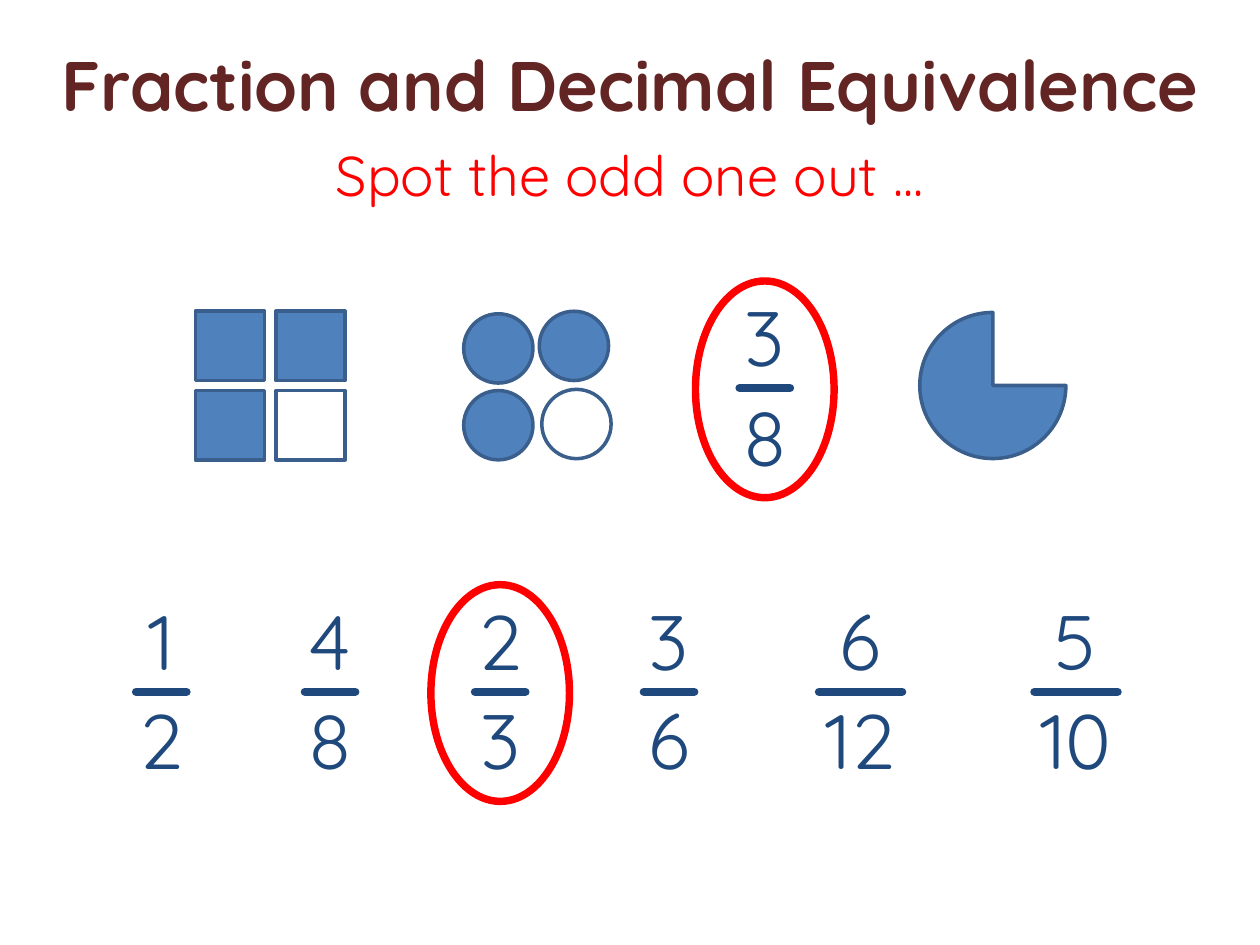
"""Build a slide on spotting the odd one out among equivalent fractions."""
from dataclasses import dataclass

from lxml.etree import SubElement
from pptx import Presentation
from pptx.dml.color import RGBColor
from pptx.enum.shapes import MSO_CONNECTOR as Connector, MSO_SHAPE as Shape
from pptx.enum.text import MSO_ANCHOR as Anchor, MSO_AUTO_SIZE as AutoSize, PP_ALIGN as Align
from pptx.oxml.ns import qn
from pptx.util import Inches, Pt

COLORS = {
    "title": "632523",
    "accent": "FF0000",
    "digit": "1F497D",
    "shaded": "4F81BD",
    "unshaded": "FFFFFF",
    "outline": "3A5F8C",
}
FONT = "Quicksand"
CELL = 0.55
FRAME_FORMAT = {
    "word_wrap": False,
    "auto_size": AutoSize.SHAPE_TO_FIT_TEXT,
    "vertical_anchor": Anchor.TOP,
    "margin_left": Inches(0.1),
    "margin_right": Inches(0.1),
    "margin_top": Inches(0.05),
    "margin_bottom": Inches(0.05),
}


@dataclass(frozen=True)
class Fraction:
    numerator: str
    denominator: str
    center: float
    top: float
    odd_one_out: bool = False


@dataclass(frozen=True)
class Part:
    left: float
    top: float
    kind: Shape
    size: float = CELL
    fill: str = "shaded"


FRACTIONS = [
    Fraction("3", "8", 6.07, 2.25, True),
    Fraction("1", "2", 1.28, 4.66),
    Fraction("4", "8", 2.62, 4.66),
    Fraction("2", "3", 3.97, 4.66, True),
    Fraction("3", "6", 5.31, 4.66),
    Fraction("6", "12", 6.83, 4.66),
    Fraction("5", "10", 8.54, 4.66),
]
PARTS = [
    Part(1.55, 2.47, Shape.RECTANGLE),
    Part(2.19, 2.47, Shape.RECTANGLE),
    Part(1.55, 3.1, Shape.RECTANGLE),
    Part(2.19, 3.1, Shape.RECTANGLE, fill="unshaded"),
    Part(4.28, 2.47, Shape.OVAL),
    Part(3.68, 2.49, Shape.OVAL),
    Part(3.68, 3.1, Shape.OVAL),
    Part(4.3, 3.09, Shape.OVAL, fill="unshaded"),
    Part(7.3, 2.48, Shape.PIE, size=1.16),
]


def rgb(name: str) -> RGBColor:
    """Return a palette colour."""
    return RGBColor.from_string(COLORS[name])


def write(shape, text: str, size: float, color: str, bold: bool = False) -> None:
    """Fill a shape with one centred line of text."""
    frame = shape.text_frame
    for name, value in FRAME_FORMAT.items():
        setattr(frame, name, value)
    paragraph = frame.paragraphs[0]
    paragraph.alignment = Align.CENTER
    run = paragraph.add_run()
    run.text = text
    for name, value in {"name": FONT, "size": Pt(size), "bold": bold}.items():
        setattr(run.font, name, value)
    run.font.color.rgb = rgb(color)


def add_text(slide, text: str, center: float, top: float, width: float,
             height: float, size: float, color: str) -> None:
    """Add a text box centred on a horizontal position."""
    box = slide.shapes.add_textbox(
        Inches(center - width / 2), Inches(top), Inches(width), Inches(height))
    write(box, text, size, color)


def set_line(shape, color: str, width: float) -> None:
    """Set the colour and width of an outline."""
    shape.line.color.rgb = rgb(color)
    shape.line.width = Pt(width)


def add_part(slide, part: Part) -> None:
    """Draw one shaded or unshaded part of a whole."""
    size = Inches(part.size)
    shape = slide.shapes.add_shape(part.kind, Inches(part.left), Inches(part.top), size, size)
    shape.shadow.inherit = False
    shape.fill.solid()
    shape.fill.fore_color.rgb = rgb(part.fill)
    set_line(shape, "outline", 2)


def add_fraction(slide, fraction: Fraction) -> None:
    """Draw a fraction and ring it when it is the odd one out."""
    center, top = fraction.center, fraction.top
    for digits, offset in ((fraction.numerator, 0), (fraction.denominator, 0.79)):
        width = 0.57 if len(digits) == 1 else 0.93
        add_text(slide, digits, center, top + offset, width, 0.84, 44, "digit")
    half = 0.2 if len(fraction.denominator) == 1 else 0.33
    level = Inches(top + 0.83)
    bar = slide.shapes.add_connector(
        Connector.STRAIGHT, Inches(center - half), level, Inches(center + half), level)
    set_line(bar, "digit", 4.75)
    bar.line._get_or_add_ln().set("cap", "rnd")
    SubElement(bar._element.spPr, qn("a:effectLst"))
    if fraction.odd_one_out:
        ring = slide.shapes.add_shape(
            Shape.OVAL, Inches(center - 0.55), Inches(top - 0.02), Inches(1.1), Inches(1.72))
        ring.shadow.inherit = False
        ring.fill.background()
        set_line(ring, "accent", 4.25)


def main() -> None:
    """Build and save the presentation."""
    presentation = Presentation()
    presentation.slide_width, presentation.slide_height = Inches(10), Inches(7.5)
    slide = presentation.slides.add_slide(presentation.slide_layouts[5])
    title = slide.shapes.title
    position = {"left": 0.28, "top": 0.28, "width": 9.44, "height": 0.77}
    for name, value in position.items():
        setattr(title, name, Inches(value))
    write(title, "Fraction and Decimal Equivalence", 40, "title", bold=True)
    add_text(slide, "Spot the odd one out ...", 5, 1.07, 5.24, 0.64, 32, "accent")
    for part in PARTS:
        add_part(slide, part)
    for fraction in FRACTIONS:
        add_fraction(slide, fraction)
    presentation.save("out.pptx")


if __name__ == "__main__":
    main()
